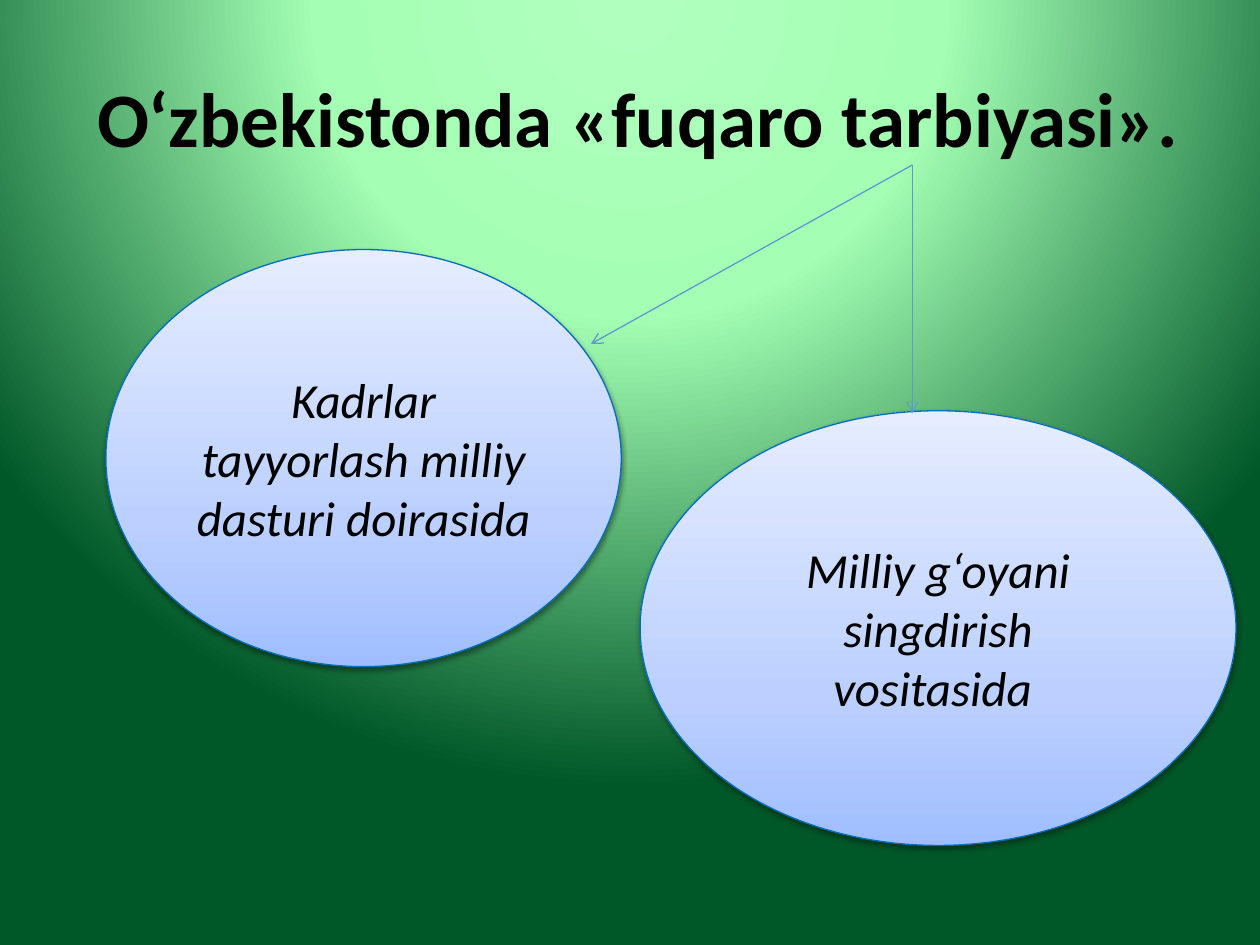
"""Build a slide with a title and two ellipses that arrows lead to."""
from lxml import etree
from pptx import Presentation
from pptx.dml.color import RGBColor
from pptx.enum import shapes, text
from pptx.oxml import ns
from pptx.util import Pt

BLACK = RGBColor(0x00, 0x00, 0x00)
OUTLINE = RGBColor(0x00, 0x6E, 0xBC)
ARROW = RGBColor(0x5D, 0x9A, 0xCF)
GREENS = [(0, RGBColor(0xB1, 0xFF, 0xBE)), (40, RGBColor(0xA4, 0xFF, 0xB4)),
          (100, RGBColor(0x00, 0x57, 0x28))]
BLUES = [(0, RGBColor(0xA0, 0xBE, 0xFF)), (35, RGBColor(0xBC, 0xD0, 0xFF)),
         (100, RGBColor(0xE5, 0xED, 0xFF))]
TITLE_FONT = {"name": "Calibri", "size": Pt(44), "bold": True}
BODY_FONT = {"name": "Calibri", "size": Pt(28), "italic": True}


def add_xml(parent, tag, **attrs):
    el = etree.SubElement(parent, ns.qn(tag))
    for key, value in attrs.items():
        el.set(key, str(value))
    return el


def start_gradient(fill, owner, stops):
    fill.gradient()
    grad = owner.xpath(".//a:gradFill")[0]
    for child in list(grad):
        grad.remove(child)
    gs_list = add_xml(grad, "a:gsLst")
    for pos, color in stops:
        gs = add_xml(gs_list, "a:gs", pos=pos * 1000)
        add_xml(gs, "a:srgbClr", val=color)
    return grad


def set_background(s):
    grad = start_gradient(s.background.fill, s._element, GREENS)
    circle = add_xml(grad, "a:path", path="circle")
    add_xml(circle, "a:fillToRect", l=50000, t=-80000, r=50000, b=180000)


def set_text(sp, content, font):
    tf = sp.text_frame
    tf.word_wrap = True
    tf.vertical_anchor = text.MSO_ANCHOR.MIDDLE
    p = tf.paragraphs[0]
    p.alignment = text.PP_ALIGN.CENTER
    r = p.add_run()
    r.text = content
    r.font.color.rgb = BLACK
    for key, value in font.items():
        setattr(r.font, key, value)


def add_title(s, content, *box):
    set_text(s.shapes.add_textbox(*map(Pt, box)), content, TITLE_FONT)


def add_ellipse(s, content, *box):
    sp = s.shapes.add_shape(shapes.MSO_SHAPE.OVAL, *map(Pt, box))
    grad = start_gradient(sp.fill, sp._element, BLUES)
    add_xml(grad, "a:lin", ang=270 * 60000, scaled=1)
    sp.line.color.rgb = OUTLINE
    sp.line.width = Pt(0.75)
    sp.shadow.inherit = False
    effects = sp._element.spPr.find(ns.qn("a:effectLst"))
    shadow = add_xml(effects, "a:outerShdw", blurRad=Pt(3.1), dist=Pt(1.6),
                     dir=90 * 60000, rotWithShape=0)
    color = add_xml(shadow, "a:srgbClr", val=BLACK)
    add_xml(color, "a:alpha", val=38000)
    set_text(sp, content, BODY_FONT)


def add_arrow(s, *ends):
    line = s.shapes.add_connector(shapes.MSO_CONNECTOR.STRAIGHT, *map(Pt, ends))
    line.line.color.rgb = ARROW
    line.line.width = Pt(0.75)
    add_xml(line.line._get_or_add_ln(), "a:tailEnd", type="arrow")
    add_xml(line._element.spPr, "a:effectLst")


def main():
    prs = Presentation()
    prs.slide_width, prs.slide_height = Pt(720), Pt(540)
    s = prs.slides.add_slide(prs.slide_layouts[6])
    set_background(s)
    add_title(s, " O‘zbekistonda «fuqaro tarbiyasi». ", 36, 21.6, 648, 90)
    add_ellipse(s, "Milliy g‘oyani singdirish vositasida ", 365.8, 234.7, 340.5, 248.4)
    add_ellipse(s, "Kadrlar tayyorlash milliy dasturi doirasida ", 60.5, 142.6, 294.5, 238.3)
    for tip in [(521.3, 236.2), (337.7, 196.5)]:
        add_arrow(s, 521.3, 94.3, *tip)
    prs.save("out.pptx")


if __name__ == "__main__":
    main()
